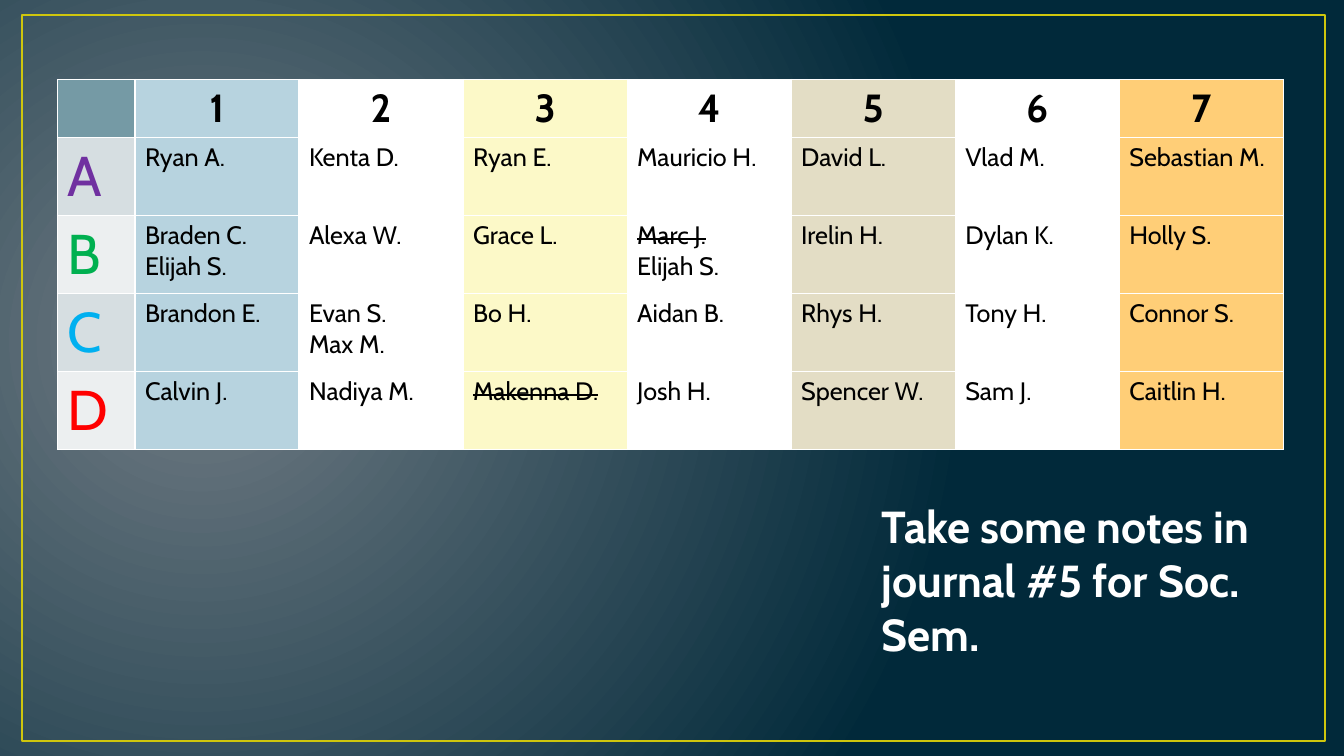
"""Builds a slide with a table of student groups and a note about the journal."""
from dataclasses import dataclass

from lxml import etree
from pptx import Presentation
from pptx import util as u
from pptx.dml.color import RGBColor
from pptx.enum import shapes, text
from pptx.oxml import ns


@dataclass(frozen=True)
class Theme:
    font: str = "Cabin"
    glow: str = "717C84"
    night: str = "01293A"
    frame: str = "CFC60D"
    corner: str = "759AA5"
    light: str = "FFFFFF"
    ink: str = "000000"
    columns: tuple = ("B7D3DF", "FFFFFF", "FCF9C8", "FFFFFF", "E3DDC5", "FFFFFF", "FFCE77")
    bands: tuple = ("D6DEE1", "ECEFF0")
    letters: tuple = ("7030A0", "00B050", "00B0F0", "FF0000")
    name_size: int = 18
    number_size: int = 28
    note_size: int = 32
    letter_size: int = 40


class Board:
    def __init__(self, slide, theme):
        self.slide, self.theme = slide, theme

    def add_words(self, paragraph, words, size, color, bold=False, struck=False):
        run = paragraph.add_run()
        run.text = words
        style = {"name": self.theme.font, "size": u.Pt(size), "bold": bold}
        for attribute, value in style.items():
            setattr(run.font, attribute, value)
        run.font.color.rgb = RGBColor.from_string(color)
        if struck:
            run._r.get_or_add_rPr().set("strike", "sngStrike")

    def background(self):
        fill = self.slide.background.fill
        fill.gradient()
        ends = ((0, self.theme.glow), (1, self.theme.night))
        for stop, (position, color) in zip(fill.gradient_stops, ends):
            stop.position = position
            stop.color.rgb = RGBColor.from_string(color)
        gradient = self.slide._element.find(".//" + ns.qn("a:gradFill"))
        gradient.remove(gradient.find(ns.qn("a:lin")))
        circle = etree.SubElement(gradient, ns.qn("a:path"), path="circle")
        etree.SubElement(circle, ns.qn("a:fillToRect"), l="15000", t="50000", r="85000", b="60000")

    def frame(self, left, top, width, height):
        border = self.slide.shapes.add_shape(
            shapes.MSO_SHAPE.RECTANGLE, u.Pt(left), u.Pt(top), u.Pt(width), u.Pt(height))
        border.shadow.inherit = False
        border.fill.background()
        border.line.color.rgb = RGBColor.from_string(self.theme.frame)
        border.line.width = u.Pt(1.5)

    def note(self, words, left, top, width, height):
        reminder = self.slide.shapes.add_textbox(u.Pt(left), u.Pt(top), u.Pt(width), u.Pt(height))
        layout = {"word_wrap": True, "auto_size": text.MSO_AUTO_SIZE.SHAPE_TO_FIT_TEXT}
        for attribute, value in layout.items():
            setattr(reminder.text_frame, attribute, value)
        self.add_words(reminder.text_frame.paragraphs[0], words, self.theme.note_size,
                       self.theme.light, bold=True)

    def paint(self, cell, color):
        cell.fill.solid()
        cell.fill.fore_color.rgb = RGBColor.from_string(color)
        properties = cell._tc.get_or_add_tcPr()
        for order, side in enumerate(("a:lnL", "a:lnR", "a:lnT", "a:lnB")):
            edge = etree.Element(ns.qn(side), w=str(u.Pt(1)))
            paint = etree.SubElement(edge, ns.qn("a:solidFill"))
            etree.SubElement(paint, ns.qn("a:srgbClr"), val=self.theme.light)
            properties.insert(order, edge)

    def groups(self, roster, left, top, widths, heights):
        theme = self.theme
        grid = self.slide.shapes.add_table(
            len(heights), len(widths), u.Pt(left), u.Pt(top),
            u.Pt(sum(widths)), u.Pt(sum(heights))).table
        for flag, value in {"first_row": False, "horz_banding": False}.items():
            setattr(grid, flag, value)
        for column, width in zip(grid.columns, widths):
            column.width = u.Pt(width)
        for row, height in zip(grid.rows, heights):
            row.height = u.Pt(height)

        self.paint(grid.cell(0, 0), theme.corner)
        for number, color in enumerate(theme.columns, 1):
            heading = grid.cell(0, number)
            self.paint(heading, color)
            title = heading.text_frame.paragraphs[0]
            title.alignment = text.PP_ALIGN.CENTER
            self.add_words(title, str(number), theme.number_size, theme.ink, bold=True)

        for index, (letter, members) in enumerate(roster.items()):
            label = grid.cell(index + 1, 0)
            self.paint(label, theme.bands[index % 2])
            self.add_words(label.text_frame.paragraphs[0], letter, theme.letter_size,
                           theme.letters[index])
            for number, (names, color) in enumerate(zip(members, theme.columns), 1):
                seat = grid.cell(index + 1, number)
                self.paint(seat, color)
                for line, name in enumerate(names.split("\n")):
                    frame = seat.text_frame
                    paragraph = frame.add_paragraph() if line else frame.paragraphs[0]
                    self.add_words(paragraph, name.strip("~"), theme.name_size, theme.ink,
                                   struck=name.startswith("~"))


ROSTER = {
    "A": ("Ryan A.", "Kenta D.", "Ryan E.", "Mauricio H.", "David L.", "Vlad M.", "Sebastian M."),
    "B": ("Braden C. Elijah S.", "Alexa W.", "Grace L.", "~Marc J.~\nElijah S.", "Irelin H.",
          "Dylan K.", "Holly S."),
    "C": ("Brandon E.", "Evan S.\nMax M.", "Bo H.", "Aidan B.", "Rhys H.", "Tony H.", "Connor S."),
    "D": ("Calvin J.", "Nadiya M.", "~Makenna D.~", "Josh H.", "Spencer W.", "Sam J.",
          "Caitlin H."),
}


def main():
    deck = Presentation()
    deck.slide_width, deck.slide_height = u.Pt(960), u.Pt(540)
    board = Board(deck.slides.add_slide(deck.slide_layouts[6]), Theme())
    board.background()
    board.frame(15.8, 10.8, 931, 518.4)
    board.groups(ROSTER, 41, 56.7, [55.4] + [117.2] * 7, [41.4] + [55.7] * 4)
    board.note("Take some notes in journal #5 for Soc. Sem.", 622.8, 352.8, 294.5, 123.8)
    deck.save("out.pptx")


if __name__ == "__main__":
    main()
